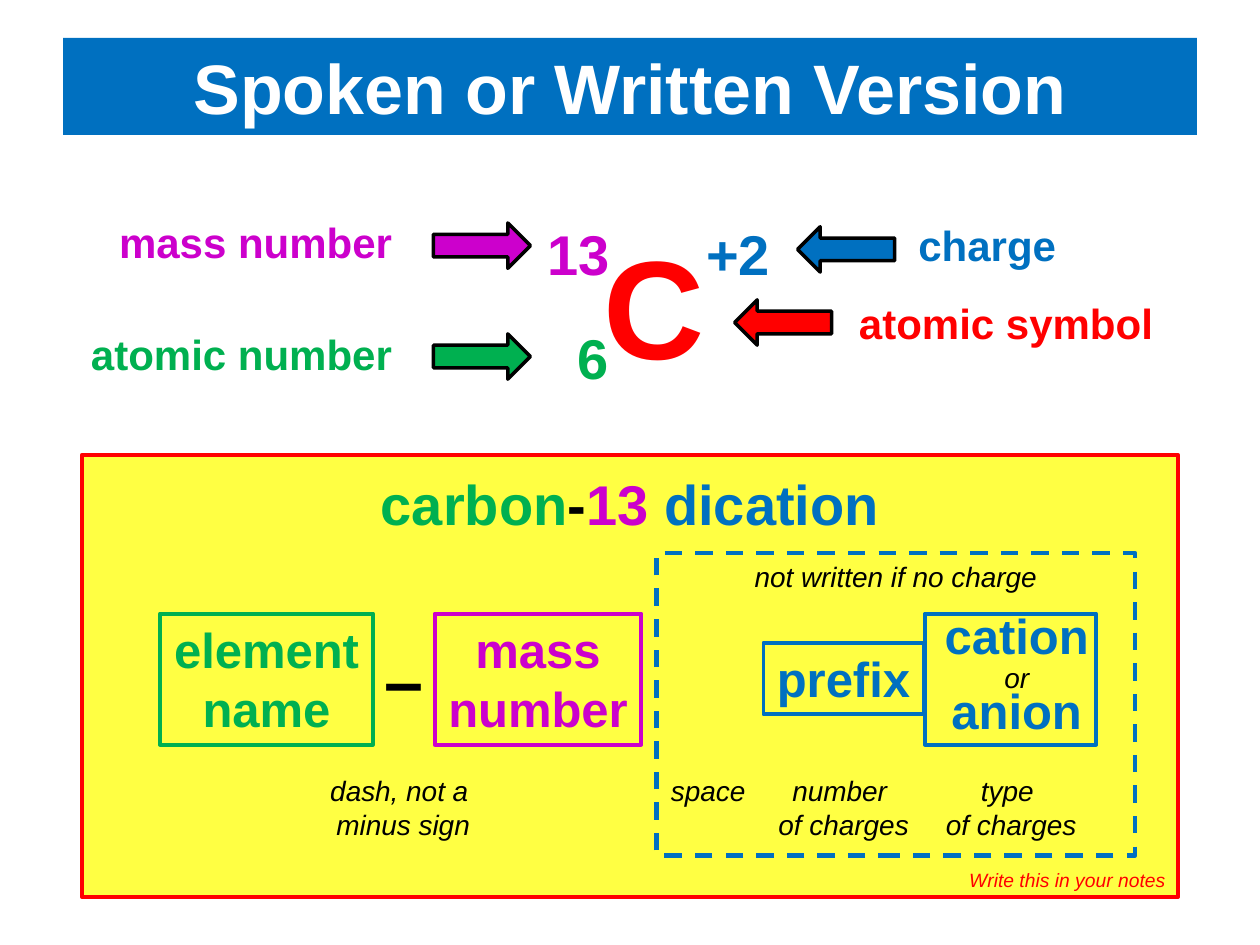
from pptx import Presentation
from pptx.dml.color import RGBColor
from pptx.enum.dml import MSO_LINE
from pptx.enum.shapes import MSO_SHAPE as SHAPE
from pptx.enum.text import MSO_ANCHOR as ANCHOR, PP_ALIGN as ALIGN
from pptx.util import Inches, Pt

BLUE = RGBColor(0x00, 0x70, 0xC0)
GREEN = RGBColor(0x00, 0xB0, 0x50)
PURPLE = RGBColor(0xCC, 0x00, 0xCC)
RED = RGBColor(0xFF, 0x00, 0x00)
YELLOW = RGBColor(0xFF, 0xFF, 0x43)
BLACK = RGBColor(0, 0, 0)
WHITE = RGBColor(0xFF, 0xFF, 0xFF)

# The slide is a grid of 100 columns by 75 rows
COLUMNS, ROWS = 100, 75
WIDTH, HEIGHT = Inches(10), Inches(7.5)


def grid(col, row, cols, rows):
    """Turn columns and rows into left, top, width and height."""
    return (int(WIDTH * col / COLUMNS), int(HEIGHT * row / ROWS),
            int(WIDTH * cols / COLUMNS), int(HEIGHT * rows / ROWS))


def bold(text, color, size):
    return text, color, {"size": Pt(size), "bold": True, "italic": False}


def note(text, color=BLACK, size=16):
    return text, color, {"size": Pt(size), "bold": False, "italic": True}


def write(shape, lines, align=ALIGN.CENTER, anchor=ANCHOR.TOP, wrap=False, spacing=()):
    """Fill a shape with lines, each a list of formatted runs."""
    frame = shape.text_frame
    frame.word_wrap = wrap
    frame.vertical_anchor = anchor
    for index, line in enumerate(lines):
        paragraph = frame.paragraphs[0] if index == 0 else frame.add_paragraph()
        paragraph.alignment = align
        if spacing:
            paragraph.line_spacing = Pt(spacing[index])
        for text, color, formats in line:
            run = paragraph.add_run()
            run.text = text
            run.font.name = "Arial"
            run.font.color.rgb = color
            for name, value in formats.items():
                setattr(run.font, name, value)


def add_label(slide, place, lines, align=ALIGN.CENTER):
    write(slide.shapes.add_textbox(*grid(*place)), lines, align)


def add_block(slide, kind, place, line, fill=None, weight=2.25):
    block = slide.shapes.add_shape(kind, *grid(*place))
    block.shadow.inherit = False
    if fill is None:
        block.fill.background()
    else:
        block.fill.solid()
        block.fill.fore_color.rgb = fill
    block.line.color.rgb = line
    block.line.width = Pt(weight)
    return block


def add_title(slide):
    title = slide.shapes.title
    title.left, title.top, title.width, title.height = grid(5, 3, 90, 7.7)
    title.fill.solid()
    title.fill.fore_color.rgb = BLUE
    write(title, [[bold("Spoken or Written Version", WHITE, 40)]],
          anchor=ANCHOR.MIDDLE, wrap=True)


def add_symbol(slide):
    # Names of the parts, each with an arrow
    parts = [
        ("mass number", PURPLE, (8.2, 16.7, 23.9, 5), ALIGN.RIGHT, SHAPE.RIGHT_ARROW, 34.4, 17.7),
        ("atomic number", GREEN, (6, 25.6, 26.1, 5), ALIGN.RIGHT, SHAPE.RIGHT_ARROW, 34.4, 26.5),
        ("charge", BLUE, (71.9, 16.9, 13.1, 5), ALIGN.LEFT, SHAPE.LEFT_ARROW, 63.3, 18),
        ("atomic symbol", RED, (66.9, 23.1, 25.6, 5), ALIGN.RIGHT, SHAPE.LEFT_ARROW, 58.3, 23.8),
    ]
    for text, color, place, align, arrow, col, row in parts:
        add_label(slide, place, [[bold(text, color, 24)]], align)
        add_block(slide, arrow, (col, row, 7.7, 3.6), BLACK, color, 2)

    # The symbol itself
    for text, color, size, place, align in [
        ("+2", BLUE, 32, (55, 16.9, 7.1, 6.4), ALIGN.RIGHT),
        ("6", GREEN, 32, (44.8, 25.2, 4.5, 6.4), ALIGN.RIGHT),
        ("C", RED, 80, (46.9, 16.9, 10.1, 14.5), ALIGN.LEFT),
        ("13", PURPLE, 32, (42.4, 16.9, 7, 6.4), ALIGN.RIGHT),
    ]:
        add_label(slide, place, [[bold(text, color, size)]], align)


def add_naming_rule(slide):
    panel = add_block(slide, SHAPE.RECTANGLE, (6.5, 36.1, 87, 35.1), RED, YELLOW)
    write(panel, [[note("Write this in your notes", RED, 11)]],
          ALIGN.RIGHT, ANCHOR.BOTTOM, wrap=True)

    # Boxes for the parts of the name
    for words, color, place, align in [
        (["element", "name"], GREEN, (12.7, 48.7, 16.9, 10.4), ALIGN.CENTER),
        (["mass", "number"], PURPLE, (34.5, 48.7, 16.4, 10.4), ALIGN.CENTER),
        (["prefix"], BLUE, (60.6, 51, 12.7, 5.7), ALIGN.CENTER),
    ]:
        box = add_block(slide, SHAPE.RECTANGLE, place, color)
        write(box, [[bold(word, color, 28)] for word in words], align)

    ion = add_block(slide, SHAPE.RECTANGLE, (73.4, 48.7, 13.6, 10.4), BLUE)
    for side, inset in {"left": 0.1, "top": 0, "right": 0, "bottom": 0}.items():
        setattr(ion.text_frame, f"margin_{side}", Inches(inset))
    write(ion, [[bold("cation", BLUE, 28)], [note("or")], [bold("anion", BLUE, 28)]],
          anchor=ANCHOR.MIDDLE, spacing=(26, 17, 26))

    add_label(slide, (29.5, 50, 5.1, 7.7), [[bold("–", BLACK, 40)]])

    # Remarks under the boxes
    for col, cols, lines in [
        (52.2, 8, ["space"]),
        (25.1, 13.8, ["dash, not a ", "minus sign"]),
        (60.7, 12.5, ["number ", "of charges"]),
        (74, 12.5, ["type ", "of charges"]),
    ]:
        add_label(slide, (col, 60.9, cols, 2.7 * len(lines) + 1),
                  [[note(line)] for line in lines])

    # Worked example
    example = [("carbon", GREEN), ("-", BLACK), ("13 ", PURPLE), ("dication", BLUE)]
    add_label(slide, (29.1, 36.8, 41.8, 6.4),
              [[bold(text, color, 32) for text, color in example]])

    # Frame around the optional part
    optional = add_block(slide, SHAPE.RECTANGLE, (52.1, 43.9, 38, 24), BLUE, weight=2.5)
    optional.line.dash_style = MSO_LINE.DASH
    write(optional, [[note("not written if no charge")]])


def main():
    deck = Presentation()
    deck.slide_width, deck.slide_height = WIDTH, HEIGHT
    slide = deck.slides.add_slide(deck.slide_layouts[5])
    add_title(slide)
    add_symbol(slide)
    add_naming_rule(slide)
    deck.save("out.pptx")


if __name__ == "__main__":
    main()
